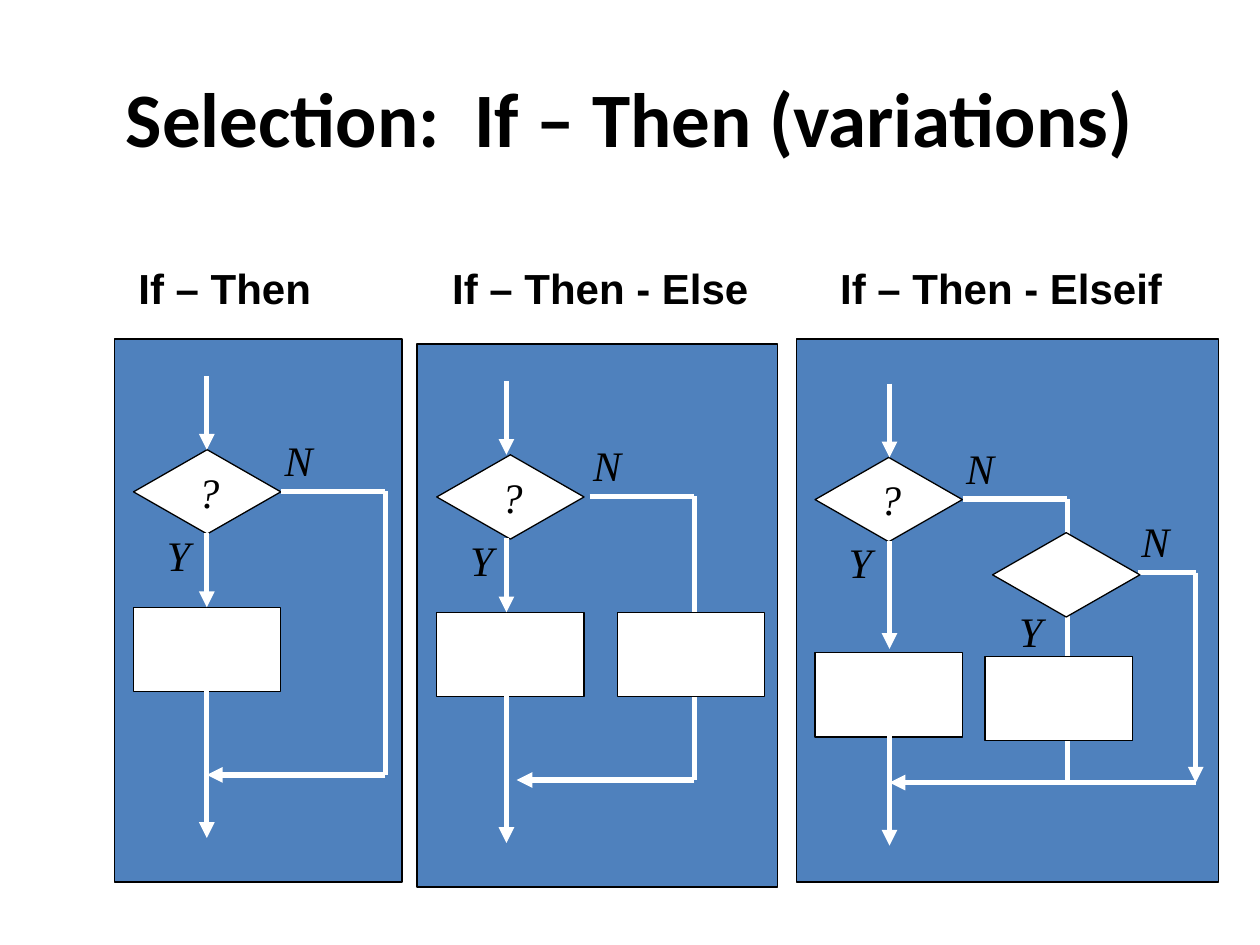
"""Build a slide with three flowcharts of the If – Then selection."""
import dataclasses
import typing

import pptx
import pptx.dml.color
import pptx.enum.dml
import pptx.enum.shapes
import pptx.enum.text
import pptx.oxml
import pptx.oxml.ns
import pptx.util

Pt = pptx.util.Pt
SHAPE = pptx.enum.shapes.MSO_SHAPE
WHITE, BLACK, BLUE = "FFFFFF", "000000", "4F81BD"
SYMBOL_WIDTH, SYMBOL_HEIGHT = 84.2, 48.2
PANEL_HEIGHT = 310.3


@dataclasses.dataclass
class Flowchart:
    """Places of one flowchart; left and top belong to its decision."""
    heading: str
    heading_left: float
    heading_width: float
    panel_left: float
    panel_top: float
    panel_width: float
    left: float
    top: float
    stem: float
    branch_start: float
    branch_end: float
    merge_start: float
    merge_end: float
    process_drop: float = 90
    yes_end: float = 90


CHARTS = [
    Flowchart("If – Then", 72, 114.5, 65.5, 193.7, 164.2,
              76.3, 257, 118.2, 160.6, 220.3, 220.3, 118.2),
    Flowchart("If – Then - Else", 251.3, 185.8, 238.3, 196.6, 205.9,
              249.6, 259.9, 289.4, 337, 396.8, 396.8, 295.2),
    Flowchart("If – Then - Elseif", 473, 200.2, 455, 193.7, 241.2,
              465.8, 261.4, 508.3, 550.1, 609.8, 683.3, 508.3,
              process_drop=111.6, yes_end=109.4),
]


def colour(value: str) -> pptx.dml.color.RGBColor:
    """Turn a hex string into a colour."""
    return pptx.dml.color.RGBColor.from_string(value)


def write(frame: typing.Any, text: str, *, font: str, size: float,
          bold: bool = False, italic: bool = False, centred: bool = False) -> None:
    """Put formatted text into a text frame."""
    para = frame.paragraphs[0]
    align = pptx.enum.text.PP_ALIGN
    para.alignment = align.CENTER if centred else align.LEFT
    span = para.add_run()
    span.text = text
    span.font.name, span.font.size = font, Pt(size)
    span.font.bold, span.font.italic = bold, italic
    span.font.color.rgb = colour(BLACK)


def add_label(shapes: typing.Any, text: str, left: float, top: float,
              width: float, **style: typing.Any) -> None:
    """Add an unwrapped text box that fits its text."""
    box = shapes.add_textbox(Pt(left), Pt(top), Pt(width), Pt(36))
    box.text_frame.word_wrap = False
    box.text_frame.auto_size = pptx.enum.text.MSO_AUTO_SIZE.SHAPE_TO_FIT_TEXT
    write(box.text_frame, text, size=24, **style)


def add_letter(shapes: typing.Any, text: str, left: float, top: float) -> None:
    """Add an italic flowchart letter."""
    add_label(shapes, text, left, top, 29, font="Times New Roman", italic=True)


def add_block(shapes: typing.Any, kind: typing.Any, left: float, top: float,
              width: float = SYMBOL_WIDTH, height: float = SYMBOL_HEIGHT,
              fill: str = WHITE) -> None:
    """Add a filled shape with a thin black outline."""
    shape = shapes.add_shape(kind, Pt(left), Pt(top), Pt(width), Pt(height))
    shape.shadow.inherit = False
    shape.fill.solid()
    shape.fill.fore_color.rgb = colour(fill)
    shape.line.color.rgb = colour(BLACK)
    shape.line.width = Pt(0.75)


def add_line(shapes: typing.Any, start: tuple[float, float],
             end: tuple[float, float], arrow: bool = False) -> None:
    """Add a white flow line, with an arrowhead at its end if asked."""
    line = shapes.add_connector(pptx.enum.shapes.MSO_CONNECTOR.STRAIGHT,
                                *(Pt(length) for length in start + end))
    line.line.color.rgb = colour(WHITE)
    line.line.width = Pt(3)
    if arrow:
        outline = line.line._get_or_add_ln()
        tip = pptx.oxml.parse_xml(
            f'<a:tailEnd {pptx.oxml.ns.nsdecls("a")} type="triangle"/>')
        outline.append(tip)
    line._element.spPr.append(pptx.oxml.parse_xml(
        f'<a:effectLst {pptx.oxml.ns.nsdecls("a")}/>'))


def draw_flowchart(page: typing.Any, chart: Flowchart) -> typing.Any:
    """Draw the parts that all flowcharts share and return the group's shapes."""
    shapes = page.shapes.add_group_shape().shapes
    left, top, stem = chart.left, chart.top, chart.stem
    branch_y, merge_y = top + 23.8, top + 185.8
    add_block(shapes, SHAPE.RECTANGLE, chart.panel_left, chart.panel_top,
              chart.panel_width, PANEL_HEIGHT, BLUE)
    add_block(shapes, SHAPE.FLOWCHART_DECISION, left, top)
    add_block(shapes, SHAPE.FLOWCHART_PROCESS, left, top + chart.process_drop)
    add_line(shapes, (stem, top - 42.2), (stem, top), arrow=True)
    add_line(shapes, (chart.branch_start, branch_y), (chart.branch_end, branch_y))
    add_line(shapes, (chart.branch_end, branch_y), (chart.branch_end, merge_y))
    add_line(shapes, (chart.merge_start, merge_y), (chart.merge_end, merge_y), arrow=True)
    add_line(shapes, (stem, top + 137.8), (stem, top + 221.8), arrow=True)
    add_line(shapes, (stem, top + 47.8), (stem, top + chart.yes_end), arrow=True)
    add_letter(shapes, "N", chart.branch_start - 5.1, top - 12.2)
    add_letter(shapes, "Y", left + 12, top + 41.8)
    add_letter(shapes, "?", left + 30, top + 5.8)
    return shapes


def draw_second_test(shapes: typing.Any, chart: Flowchart) -> None:
    """Draw the second decision of the Elseif flowchart."""
    side, turn_y = chart.merge_start, 327.2
    add_line(shapes, (side, turn_y), (side, chart.top + 185.8), arrow=True)
    add_line(shapes, (650.2, turn_y), (side, turn_y))
    add_letter(shapes, "N", 645.1, 290.9)
    add_letter(shapes, "Y", 575.3, 342.7)
    add_block(shapes, SHAPE.FLOWCHART_DECISION, 567.2, 304.4)
    add_block(shapes, SHAPE.FLOWCHART_PROCESS, 562.9, 375.1)


def main() -> None:
    """Build and save the deck."""
    deck = pptx.Presentation()
    deck.slide_width, deck.slide_height = Pt(720), Pt(540)
    page = deck.slides.add_slide(deck.slide_layouts[5])
    title = page.shapes.title
    title.left, title.top, title.width, title.height = Pt(36), Pt(21.6), Pt(648), Pt(90)
    title.text_frame.vertical_anchor = pptx.enum.text.MSO_ANCHOR.MIDDLE
    write(title.text_frame, "Selection:  If – Then (variations)",
          font="Calibri", size=44, bold=True, centred=True)

    basic, other, chained = CHARTS
    draw_flowchart(page, basic)
    add_block(draw_flowchart(page, other), SHAPE.FLOWCHART_PROCESS,
              352.8, other.top + other.process_drop)
    draw_second_test(draw_flowchart(page, chained), chained)
    for chart in CHARTS:
        add_label(page.shapes, chart.heading, chart.heading_left, 146.2,
                  chart.heading_width, font="Arial", bold=True)
    deck.save("out.pptx")


if __name__ == "__main__":
    main()
